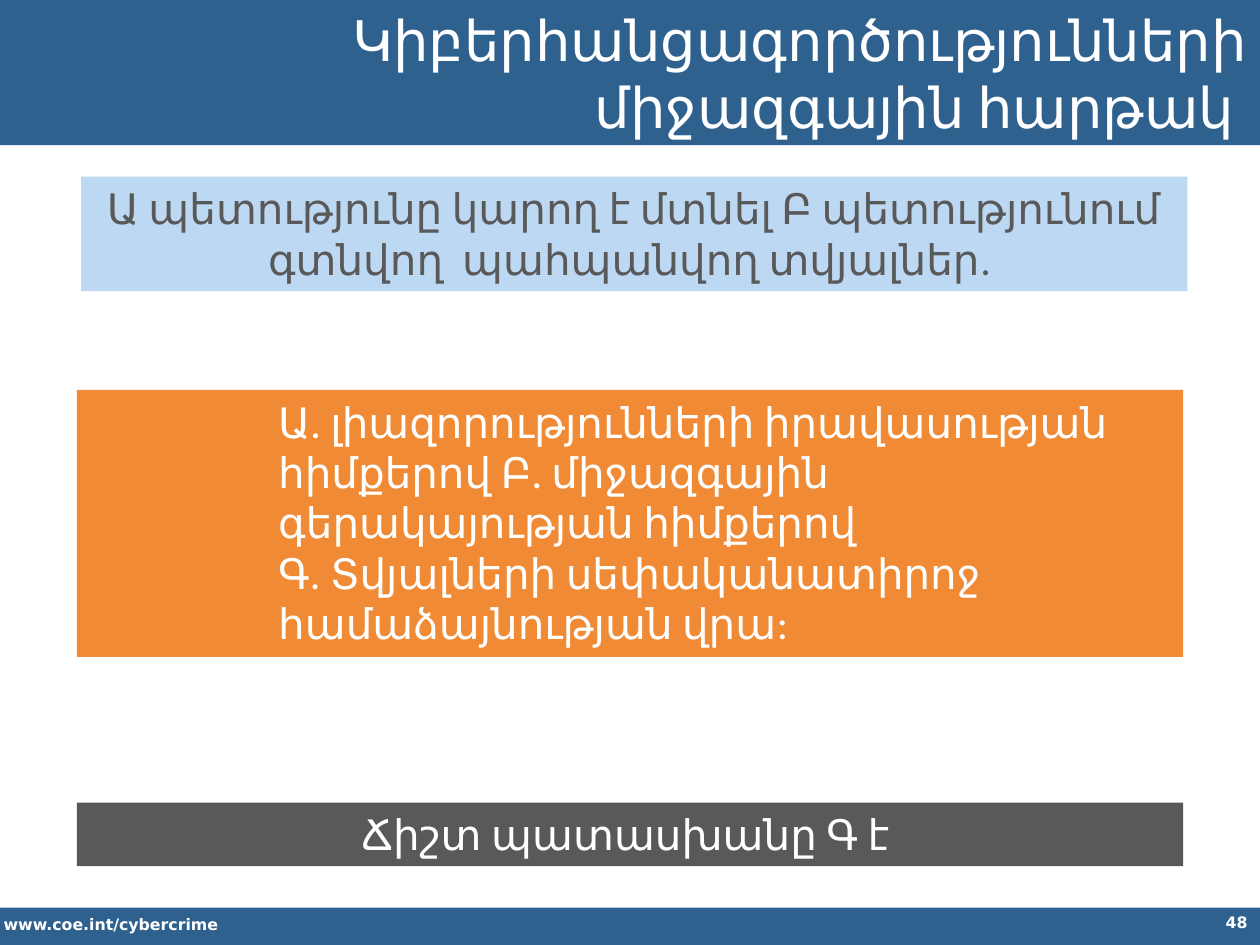
from dataclasses import dataclass

from pptx import Presentation
from pptx.dml.color import RGBColor
from pptx.enum.shapes import MSO_SHAPE
from pptx.enum.text import MSO_ANCHOR, PP_ALIGN
from pptx.util import Pt


@dataclass(frozen=True)
class Theme:
    blue: str = "2F618F"
    pale_blue: str = "BDD8F3"
    orange: str = "F08A34"
    gray: str = "595959"
    white: str = "FFFFFF"
    body_font: str = "Calibri"
    footer_font: str = "DejaVu Sans"
    title_size: int = 32
    body_size: int = 24
    footer_size: int = 9


THEME = Theme()
PANEL_LEFT, PANEL_WIDTH = 43.9, 632.2
ANSWER_INDENT = 108


def add_band(page, left, top, width, height, color):
    band = page.shapes.add_shape(
        MSO_SHAPE.RECTANGLE, Pt(left), Pt(top), Pt(width), Pt(height))
    band.shadow.inherit = False
    band.fill.solid()
    band.fill.fore_color.rgb = RGBColor.from_string(color)
    band.line.fill.background()
    return band


def write(box, text, size, color=THEME.white, align=PP_ALIGN.LEFT,
          anchor=MSO_ANCHOR.TOP, font=THEME.body_font, bold=False, indent=0):
    frame = box.text_frame
    frame.word_wrap = True
    frame.vertical_anchor = anchor
    frame.text = text
    for para in frame.paragraphs:
        para.alignment = align
        if indent:
            para.level = 3
            para._p.get_or_add_pPr().set("marL", str(Pt(indent)))
        for span in para.runs:
            span.font.name = font
            span.font.size = Pt(size)
            span.font.bold = bold
            span.font.color.rgb = RGBColor.from_string(color)


def add_panel(page, top, height, fill, text, left=PANEL_LEFT, **style):
    panel = add_band(page, left, top, PANEL_WIDTH, height, fill)
    write(panel, text, THEME.body_size, **style)


def add_footer_text(page, left, top, width, height, text, align):
    box = page.shapes.add_textbox(Pt(left), Pt(top), Pt(width), Pt(height))
    write(box, text, THEME.footer_size, align=align,
          font=THEME.footer_font, bold=True)


def add_title(page, text):
    title = add_band(page, 158.4, 5, 561.6, 72.7, THEME.blue)
    write(title, text, THEME.title_size, align=PP_ALIGN.RIGHT,
          anchor=MSO_ANCHOR.MIDDLE)


def main():
    deck = Presentation()
    deck.slide_width, deck.slide_height = Pt(720), Pt(540)
    page = deck.slides.add_slide(deck.slide_layouts[6])

    add_band(page, 0, -2, 720, 85, THEME.blue)
    add_band(page, 0, 518.6, 720, 23, THEME.blue)
    add_footer_text(page, -5, 519, 253.4, 18, "www.coe.int/cybercrime",
                    PP_ALIGN.LEFT)
    add_footer_text(page, 552.2, 518.2, 167.8, 21.6, "48", PP_ALIGN.RIGHT)

    add_panel(page, 101, 65.4, THEME.pale_blue,
              "Ա պետությունը կարող է մտնել Բ պետությունում "
              "գտնվող  պահպանվող տվյալներ. ",
              left=46.3, color=THEME.gray, align=PP_ALIGN.CENTER)
    add_panel(page, 458.6, 36.3, THEME.gray, "Ճիշտ պատասխանը Գ է ",
              align=PP_ALIGN.CENTER)
    add_panel(page, 222.8, 152.6, THEME.orange,
              "Ա. լիազորությունների իրավասության հիմքերով "
              "Բ. միջազգային գերակայության հիմքերով\n"
              "Գ. Տվյալների սեփականատիրոջ համաձայնության վրա:",
              indent=ANSWER_INDENT)
    add_title(page, "Կիբերհանցագործությունների միջազգային հարթակ ")

    deck.save("out.pptx")


if __name__ == "__main__":
    main()
